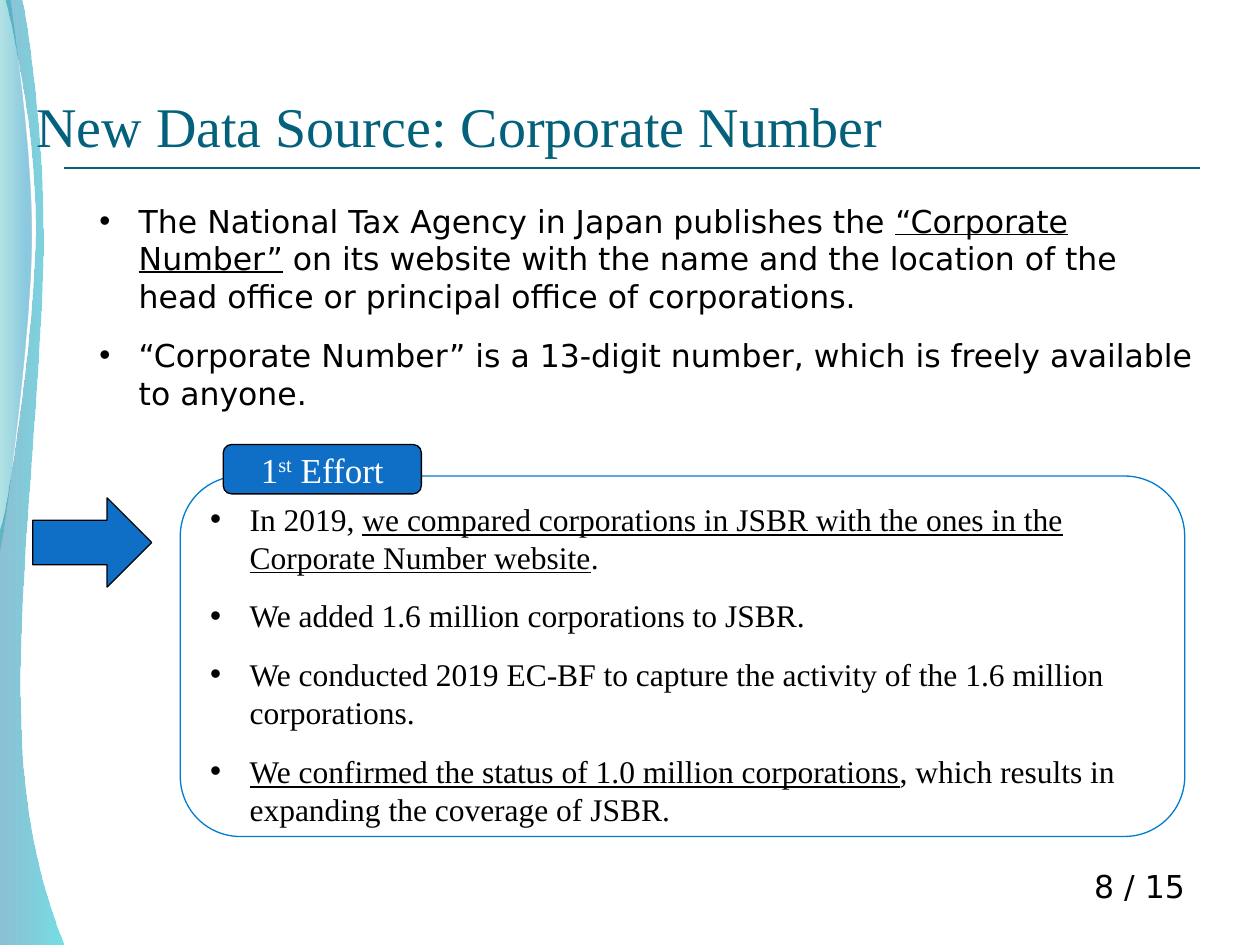
"""Build the slide on corporate numbers as a new data source."""
from dataclasses import dataclass

from lxml.etree import SubElement
from pptx import Presentation
from pptx.dml.color import RGBColor
from pptx.enum.shapes import MSO_CONNECTOR, MSO_SHAPE
from pptx.enum.text import MSO_ANCHOR, PP_ALIGN
from pptx.oxml.ns import qn
from pptx.util import Pt


@dataclass(frozen=True)
class Theme:
    title: str = "04617B"
    text: str = "000000"
    light: str = "FFFFFF"
    accent: str = "0F6FC6"
    frame: str = "007BD0"
    sans: str = "DejaVu Sans"
    serif: str = "Times New Roman"
    title_size: float = 32
    label_size: float = 20
    body_size: float = 18
    gap: float = 12
    indent: float = 22.5
    wide_ribbon: tuple = ((0, "0074A1", 45), (1, "00C6CF", 55))
    narrow_ribbon: tuple = ((0, "00A1A9", 30), (0.8, "008BBF", 45))


THEME = Theme()

WIDE_RIBBON = [
    (0, 540), (0, 302.4),
    (5.8, 283, 20.2, 181.4, 20.2, 130.3),
    (20.2, 79.2, 8.6, 22.3, 2.9, 0),
    (12.2, -0.7),
    (14.4, 8.6, 24.5, 69.8, 24.5, 136.8),
    (24.5, 203.8, 9.4, 334.1, 11.5, 401),
    (11.5, 470.2, 26.6, 515.5, 36.7, 540.7),
]
NARROW_RIBBON = [
    (0, 314.6),
    (3.6, 296.6, 17.3, 192.2, 18, 139.7),
    (18.7, 87.1, 8.6, 23, 5.8, 0),
    (0, 0),
]

SOURCE_POINTS = [
    [("The National Tax Agency in Japan publishes the ", False),
     ("“Corporate Number”", True),
     (" on its website with the name and the location of the head office "
      "or principal office of corporations.", False)],
    [("“Corporate Number” is a 13-digit number, which is freely available "
      "to anyone.", False)],
]
EFFORT_POINTS = [
    [("In 2019, ", False),
     ("we compared corporations in JSBR with the ones in the "
      "Corporate Number website", True),
     (".", False)],
    [("We added 1.6 million corporations to JSBR.", False)],
    [("We conducted 2019 EC-BF to capture the activity of the 1.6 million "
      "corporations.", False)],
    [("We confirmed the status of 1.0 million corporations", True),
     (", which results in expanding the coverage of JSBR.", False)],
]


def rgb(color):
    return RGBColor.from_string(color)


def add_run(p, text, *, size=THEME.body_size, font=THEME.sans,
            color=THEME.text, underline=False, superscript=False):
    r = p.add_run()
    r.text = text
    r.font.size = Pt(size)
    r.font.name = font
    r.font.color.rgb = rgb(color)
    if underline:
        r.font.underline = True
    if superscript:
        r._r.get_or_add_rPr().set("baseline", "30000")


def add_box(s, left, top, width, height, anchor=MSO_ANCHOR.TOP):
    sp = s.shapes.add_textbox(Pt(left), Pt(top), Pt(width), Pt(height))
    tf = sp.text_frame
    tf.word_wrap = True
    tf.vertical_anchor = anchor
    return tf


def add_shape(s, kind, left, top, width, height, *, line, fill=None):
    sp = s.shapes.add_shape(kind, Pt(left), Pt(top), Pt(width), Pt(height))
    sp.shadow.inherit = False
    if fill:
        sp.fill.solid()
        sp.fill.fore_color.rgb = rgb(fill)
    else:
        sp.fill.background()
    sp.line.color.rgb = rgb(line)
    sp.line.width = Pt(0.75)
    return sp.text_frame


def add_bullets(tf, items, font):
    tf.vertical_anchor = MSO_ANCHOR.TOP
    for i, parts in enumerate(items):
        p = tf.add_paragraph() if i else tf.paragraphs[0]
        p.alignment = PP_ALIGN.LEFT
        if i:
            p.space_before = Pt(THEME.gap)
        pPr = p._p.get_or_add_pPr()
        pPr.set("marL", str(Pt(THEME.indent)))
        pPr.set("indent", str(-Pt(THEME.indent)))
        SubElement(pPr, qn("a:buFont"), typeface="Arial")
        SubElement(pPr, qn("a:buChar"), char="•")
        for text, underline in parts:
            add_run(p, text, font=font, underline=underline)


def bend(segment, control, top):
    curve = segment.makeelement(qn("a:cubicBezTo"))
    for x, y in zip(control[::2], control[1::2]):
        SubElement(curve, qn("a:pt"), x=str(round(x * 100)),
                   y=str(round((y - top) * 100)))
    segment.getparent().replace(segment, curve)


def add_ribbon(s, outline, stops):
    ends = [step[-2:] for step in outline]
    top = min(y for _, y in ends)
    corners = [(round(x * 100), round(y * 100)) for x, y in ends]
    builder = s.shapes.build_freeform(*corners[0], scale=Pt(1) / 100)
    builder.add_line_segments(corners[1:], close=True)
    sp = builder.convert_to_shape()
    spPr = sp._element.spPr
    for segment, step in zip(spPr.findall(f".//{qn('a:lnTo')}"), outline[1:]):
        if len(step) == 6:
            bend(segment, step, top)
    sp.shadow.inherit = False
    sp.line.fill.background()
    sp.fill.gradient()
    sp.fill.gradient_angle = 0
    for stop, (position, color, _) in zip(sp.fill.gradient_stops, stops):
        stop.position = position
        stop.color.rgb = rgb(color)
    colors = spPr.findall(f".//{qn('a:gs')}/{qn('a:srgbClr')}")
    for element, (_, _, opacity) in zip(colors, stops):
        SubElement(element, qn("a:alpha"), val=str(opacity * 1000))


def add_rule(s, left, right, y):
    sp = s.shapes.add_connector(
        MSO_CONNECTOR.STRAIGHT, Pt(left), Pt(y), Pt(right), Pt(y))
    sp.line.color.rgb = rgb(THEME.title)
    sp.line.width = Pt(1.5)
    SubElement(sp._element.spPr, qn("a:effectLst"))


def main():
    prs = Presentation()
    prs.slide_width, prs.slide_height = Pt(720), Pt(540)
    s = prs.slides.add_slide(prs.slide_layouts[6])

    add_rule(s, 36.7, 686, 96)
    add_ribbon(s, WIDE_RIBBON, THEME.wide_ribbon)
    add_ribbon(s, NARROW_RIBBON, THEME.narrow_ribbon)

    tf = add_box(s, 13.7, 4.3, 726.5, 90, MSO_ANCHOR.BOTTOM)
    add_run(tf.paragraphs[0], "New Data Source: Corporate Number",
            size=THEME.title_size, font=THEME.serif, color=THEME.title)

    p = add_box(s, 516.2, 491.8, 168, 36).paragraphs[0]
    p.alignment = PP_ALIGN.RIGHT
    add_run(p, "8 / 15")

    add_bullets(add_box(s, 49.7, 111.6, 646.6, 206), SOURCE_POINTS, THEME.sans)

    add_shape(s, MSO_SHAPE.RIGHT_ARROW, 18.7, 284.5, 68, 51,
              line=THEME.text, fill=THEME.accent)
    tf = add_shape(s, MSO_SHAPE.ROUNDED_RECTANGLE, 103, 272, 574, 206,
                   line=THEME.frame)
    add_bullets(tf, EFFORT_POINTS, THEME.serif)

    tf = add_shape(s, MSO_SHAPE.ROUNDED_RECTANGLE, 127.6, 254, 113.2, 28.2,
                   line=THEME.text, fill=THEME.accent)
    p = tf.paragraphs[0]
    p.alignment = PP_ALIGN.CENTER
    for text in ("1", "st", " Effort"):
        add_run(p, text, size=THEME.label_size, font=THEME.serif,
                color=THEME.light, superscript=text == "st")

    prs.save("out.pptx")


if __name__ == "__main__":
    main()
